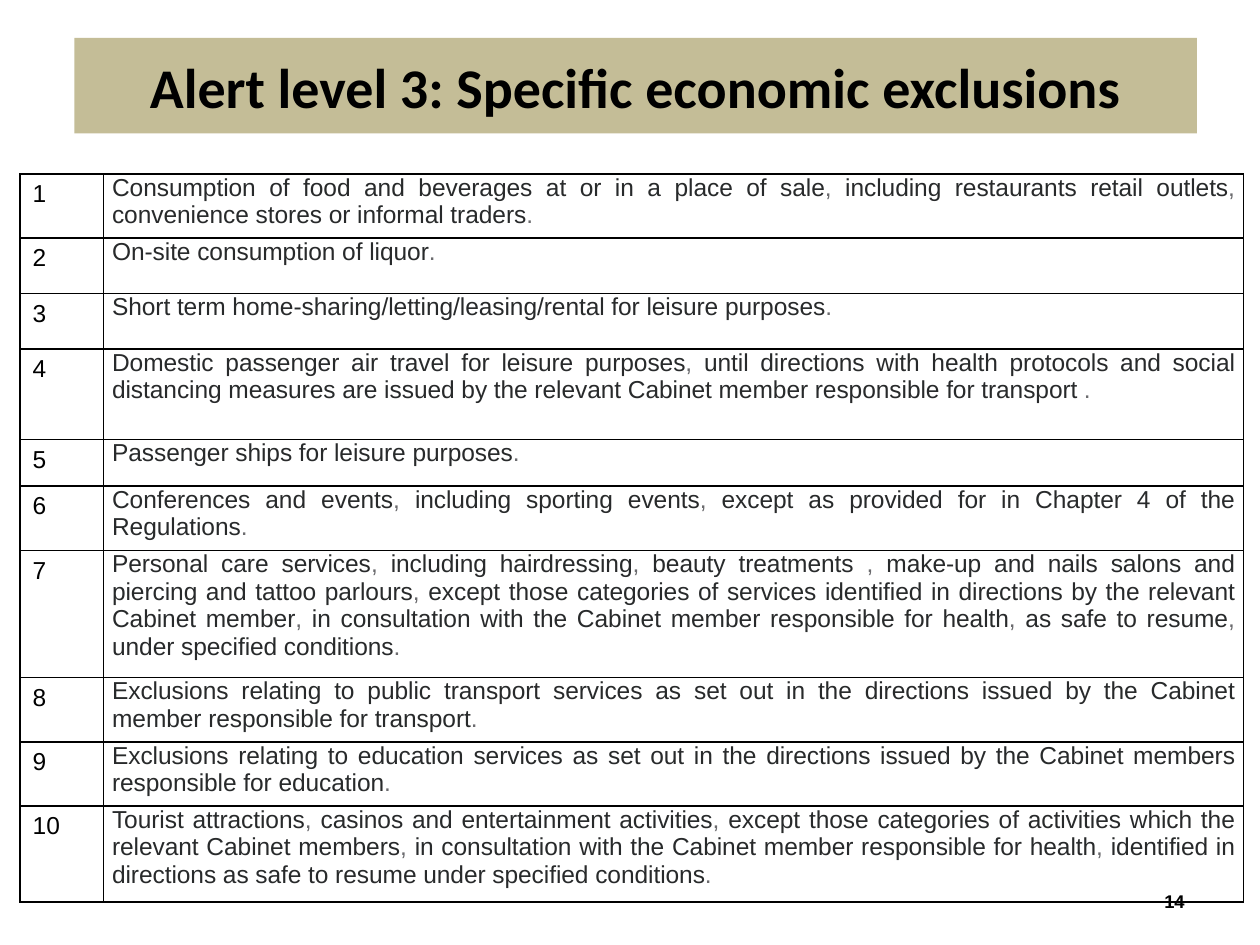
"""Build a slide listing the specific economic exclusions under alert level 3."""
import lxml.etree
import pptx
import pptx.dml.color
import pptx.enum.text
import pptx.oxml
import pptx.oxml.ns
import pptx.util
from pptx.util import Inches

ALIGN = pptx.enum.text.PP_ALIGN
MIDDLE = pptx.enum.text.MSO_ANCHOR.MIDDLE


def rgb(value):
    """Return the colour for a hex string."""
    return pptx.dml.color.RGBColor.from_string(value)


def set_borders(cell):
    """Draw a thin black line on every side of a cell."""
    tcPr = cell._tc.get_or_add_tcPr()
    for side in ("lnL", "lnR", "lnT", "lnB"):
        ln = lxml.etree.SubElement(tcPr, pptx.oxml.ns.qn(f"a:{side}"), w="12700")
        fill = lxml.etree.SubElement(ln, pptx.oxml.ns.qn("a:solidFill"))
        lxml.etree.SubElement(fill, pptx.oxml.ns.qn("a:srgbClr"), val="000000")


rows = [
    (0.51, "Consumption of food and beverages at or in a place of sale, including restaurants "
           "retail outlets, convenience stores or informal traders."),
    (0.44, "On-site consumption of liquor."),
    (0.44, "Short term home-sharing/letting/leasing/rental for leisure purposes."),
    (0.72, "Domestic passenger air travel for leisure purposes, until directions with health "
           "protocols and social distancing measures are issued by the relevant Cabinet member "
           "responsible for transport ."),
    (0.37, "Passenger ships for leisure purposes."),
    (0.51, "Conferences and events, including sporting events, except as provided for in "
           "Chapter 4 of the Regulations."),
    (1.01, "Personal care services, including hairdressing, beauty treatments , make-up and "
           "nails salons and piercing and tattoo parlours, except those categories of services "
           "identified in directions by the relevant Cabinet member, in consultation with the "
           "Cabinet member responsible for health, as safe to resume, under specified conditions."),
    (0.51, "Exclusions relating to public transport services as set out in the directions issued "
           "by the Cabinet member responsible for transport."),
    (0.51, "Exclusions relating to education services as set out in the directions issued by the "
           "Cabinet members responsible for education."),
    (0.76, "Tourist attractions, casinos and entertainment activities, except those categories of "
           "activities which the relevant Cabinet members, in consultation with the Cabinet member "
           "responsible for health, identified in directions as safe to resume under specified "
           "conditions."),
]

prs = pptx.Presentation()
prs.slide_width, prs.slide_height = Inches(10), Inches(7.5)
s = prs.slides.add_slide(prs.slide_layouts[5])

sp = s.shapes.title
sp.left, sp.top, sp.width, sp.height = Inches(0.59), Inches(0.3), Inches(8.91), Inches(0.76)
sp.fill.solid()
sp.fill.fore_color.rgb = rgb("C4BD97")
tf = sp.text_frame
tf.text = "Alert level 3: Specific economic exclusions"
tf.vertical_anchor = MIDDLE
p = tf.paragraphs[0]
p.alignment = ALIGN.CENTER
p.font.name, p.font.size, p.font.bold = "Calibri", pptx.util.Pt(32), True
p.font.color.rgb = rgb("000000")

height = sum(h for h, text in rows)
table = s.shapes.add_table(
    len(rows), 2, Inches(0.16), Inches(1.38), Inches(9.71), Inches(height)).table
table.first_row = table.horz_banding = False
table.columns[0].width, table.columns[1].width = Inches(0.66), Inches(9.05)

for i, (h, text) in enumerate(rows):
    table.rows[i].height = Inches(h)
    number, detail = table.cell(i, 0), table.cell(i, 1)
    number.text = str(i + 1)
    detail.margin_left = detail.margin_right = Inches(0.07)
    detail.margin_top = detail.margin_bottom = 0
    p = detail.text_frame.paragraphs[0]
    p.alignment = ALIGN.JUSTIFY
    p.space_before = pptx.util.Pt(6)
    parts = text[:-1].split(", ")
    for j, part in enumerate(parts):
        mark = "." if j == len(parts) - 1 else ", "
        for piece, color in ((part, "282A2B"), (mark, "6B6B6E")):
            r = p.add_run()
            r.text = piece
            r.font.color.rgb = rgb(color)
            r.font._element.set("spc", "-5")
    for cell, color in ((number, "000000"), (detail, "282A2B")):
        set_borders(cell)
        cell.fill.background()
        p = cell.text_frame.paragraphs[0]
        p.font.name, p.font.size = "Arial", pptx.util.Pt(14)
        p.font.color.rgb = rgb(color)

sp = s.shapes.add_textbox(Inches(7.17), Inches(6.95), Inches(2.33), Inches(0.4))
tf = sp.text_frame
tf.word_wrap = True
tf.vertical_anchor = MIDDLE
tf.text = "14"
p = tf.paragraphs[0]
p.alignment = ALIGN.RIGHT
p.font.name, p.font.size, p.font.bold = "Arial", pptx.util.Pt(10.5), True
p.font.color.rgb = rgb("000000")

prs.save("out.pptx")
